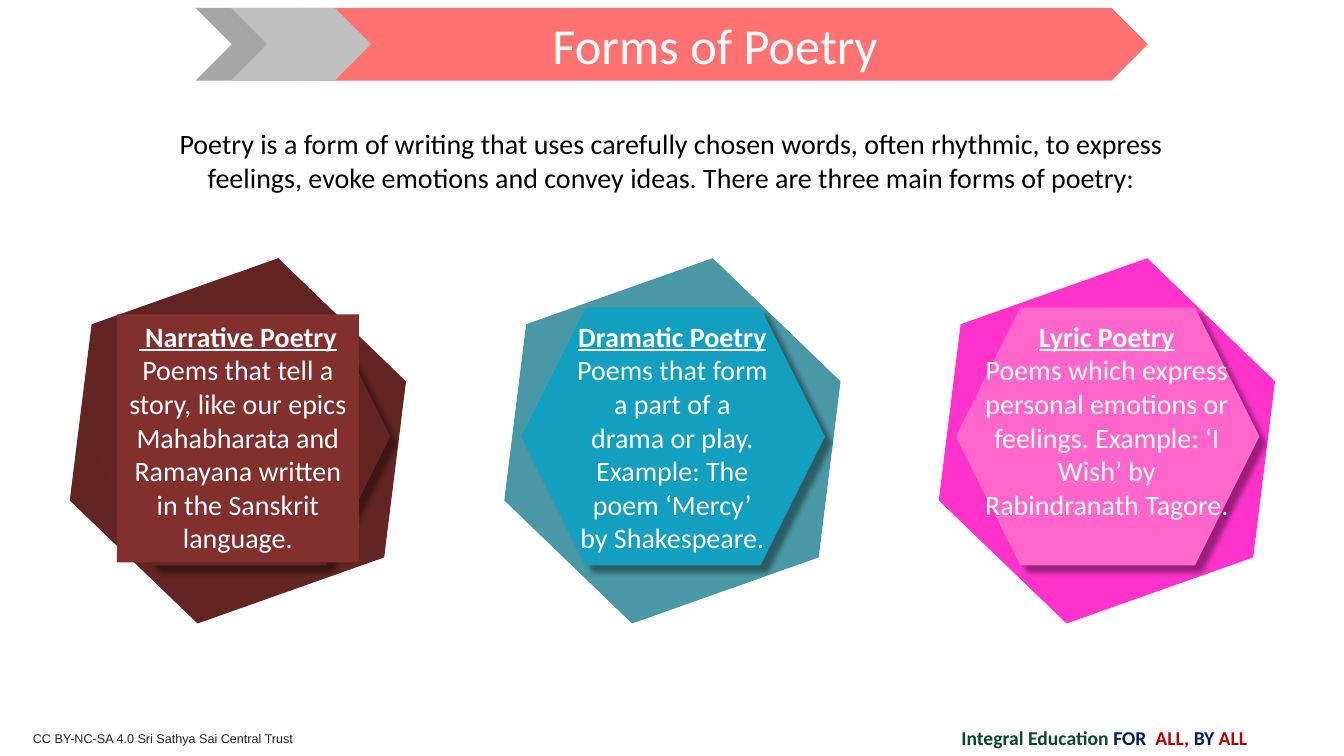
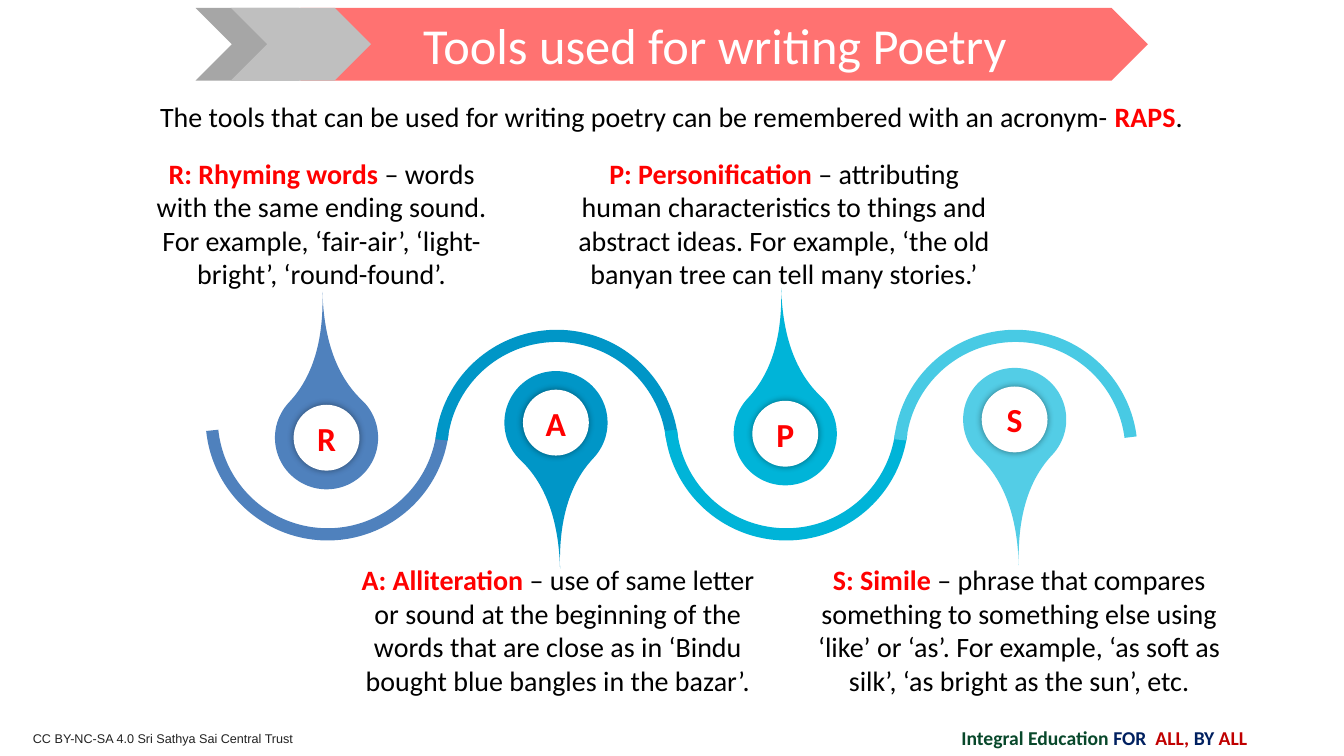
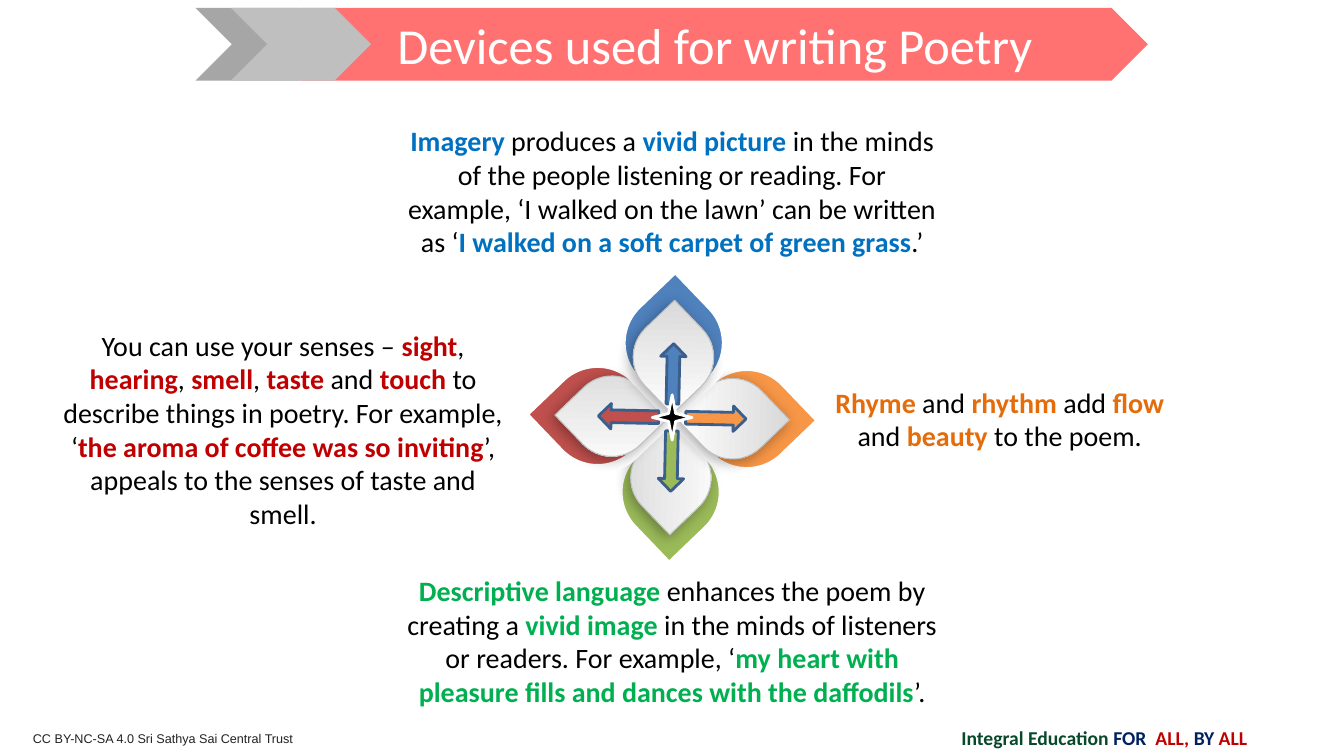
from dataclasses import dataclass
from math import cos, radians, sin

from lxml import etree
from pptx import Presentation
from pptx.dml import color
from pptx.enum import shapes, text
from pptx.oxml import ns
from pptx.util import Cm, Pt


@dataclass(frozen=True)
class Theme:
    font: str = "Calibri"
    legal: str = "Arial"
    title: int = 36
    letter: int = 24
    body: int = 20
    motto: int = 14
    small: int = 9
    ink: str = "000000"
    paper: str = "FFFFFF"
    band: str = "FF7271"
    dark: str = "A6A6A6"
    light: str = "BFBFBF"
    pale: str = "D9D9D9"
    edge: str = "3A5F8C"
    grey: str = "222222"
    green: str = "08482B"
    navy: str = "002060"
    brick: str = "C00000"
    red: str = "FF0000"


T = Theme()
KIND = shapes.MSO_SHAPE
MID = text.MSO_ANCHOR.MIDDLE
CENTRE = text.PP_ALIGN.CENTER
FULL = 216  # a whole turn in block-arc adjustment units


def rgb(code):
    return color.RGBColor.from_string(code)


# Basic parts; every box is (left, top, width, height) in cm
def shape(slide, kind, box, fill, turn=0, adj=(), line=None, wide=0):
    part = slide.shapes.add_shape(kind, *map(Cm, box))
    part.shadow.inherit = False
    part.rotation = turn
    for i, value in enumerate(adj):
        part.adjustments[i] = value
    if fill:
        part.fill.solid()
        part.fill.fore_color.rgb = rgb(fill)
    if line:
        part.line.color.rgb = rgb(line)
        part.line.width = Pt(wide)
    else:
        part.line.fill.background()
    return part


def shade(part, alpha, blur, dist, angle):
    effects = part._element.spPr.find(ns.qn("a:effectLst"))
    outer = etree.SubElement(
        effects, ns.qn("a:outerShdw"), blurRad=str(Pt(blur)),
        dist=str(Pt(dist)), dir=str(angle * 60000), algn="ctr", rotWithShape="0")
    tint = etree.SubElement(outer, ns.qn("a:srgbClr"), val=T.ink)
    etree.SubElement(tint, ns.qn("a:alpha"), val=str(alpha * 1000))


def style(run, size, ink, bold=False, line=False, font=T.font):
    run.font.name = font
    run.font.size = Pt(size)
    run.font.color.rgb = rgb(ink)
    run.font.bold = bold
    run.font.underline = line


def label(part, words, size, ink, bold=False):
    frame = part.text_frame
    frame.text = words
    frame.vertical_anchor = MID
    frame.paragraphs[0].alignment = CENTRE
    style(frame.paragraphs[0].runs[0], size, ink, bold)


def frame_at(slide, box):
    frame = slide.shapes.add_textbox(*map(Cm, box)).text_frame
    frame.word_wrap = True
    return frame


def prose(slide, box, words, accent=T.ink):
    """Centred body text; words between bars are bold in the accent colour."""
    para = frame_at(slide, box).paragraphs[0]
    para.alignment = CENTRE
    for i, piece in enumerate(words.split("|")):
        if piece:
            run = para.add_run()
            run.text = piece
            strong = i % 2 == 1
            style(run, T.body, accent if strong else T.ink, strong)


# Shared regions
def band(slide, box, title):
    x, y, w, h = box
    shape(slide, KIND.CHEVRON, (x, y, 3.53, h), T.dark)
    plate = shape(slide, KIND.PENTAGON, (x + 2.64, y, w - 2.64, h), T.band)
    label(plate, title, T.title, T.paper)
    shape(slide, KIND.CHEVRON, (x + 0.89, y, 3.53, h), T.light)


def foot(slide, box):
    x, y, w, h = box
    frame = frame_at(slide, (x, y + 0.26, 16.94, 0.64))
    frame.text = "CC BY-NC-SA 4.0 Sri Sathya Sai Central Trust"
    style(frame.paragraphs[0].runs[0], T.small, T.grey, font=T.legal)
    frame = frame_at(slide, (x + w - 12.42, y, 12.42, h))
    frame.vertical_anchor = MID
    para = frame.paragraphs[0]
    para.alignment = CENTRE
    for words, ink in (("Integral Education ", T.green), ("FOR  ", T.navy),
                       ("ALL, ", T.brick), ("BY", T.navy), (" ALL", T.brick)):
        run = para.add_run()
        run.text = words
        style(run, T.motto, ink, True)


def page(deck, title):
    slide = deck.slides.add_slide(deck.slide_layouts[6])
    foot(slide, (0.58, 18.03, 33.46, 1.14))
    band(slide, (4.93, 0.2, 24, 1.83), title)
    return slide


# Forms: a tilted hexagon behind a level one, with text on top
def card(slide, box, back, front, width, head, body, panel=None):
    x, y, w, h = box
    adj = (0.25,)
    shape(slide, KIND.HEXAGON, box, back, 340.5, adj)
    inner = shape(slide, KIND.HEXAGON, (x + 0.69, y + 0.64, 7.65, 6.5), front, 0, adj)
    shade(inner, 40, 4, 7, 45)
    area = (x + (w - width) / 2, y + 0.81, width, 6.25)
    if panel:
        frame = shape(slide, KIND.RECTANGLE, area, panel).text_frame
        frame.word_wrap = True
        frame.vertical_anchor = text.MSO_ANCHOR.TOP
    else:
        frame = frame_at(slide, area)
    frame.text = head + "\n" + body
    for i, para in enumerate(frame.paragraphs):
        para.alignment = CENTRE
        style(para.runs[0], T.body, T.paper, i == 0, i == 0)


def forms(deck):
    slide = page(deck, "Forms of Poetry")
    cards = (
        ("632523", "632523", 6.1, " Narrative Poetry",
         "Poems that tell a story, like our epics Mahabharata and Ramayana "
         "written in the Sanskrit language.", "82302E"),
        ("4A98A6", "139FC0", 5.33, "Dramatic Poetry",
         "Poems that form a part of a drama or play. Example: The poem "
         "‘Mercy’ by Shakespeare."),
        ("FF33CC", "FF66CC", 6.65, "Lyric Poetry",
         "Poems which express personal emotions or feelings. Example: "
         "‘I Wish’ by Rabindranath Tagore."),
    )
    for i, item in enumerate(cards):
        card(slide, (1.5 + i * 10.95, 7.11, 8.99, 8), *item)
    prose(slide, (4.09, 3.07, 25.65, 1.96),
          "Poetry is a form of writing that uses carefully chosen words, often "
          "rhythmic, to express feelings, evoke emotions and convey ideas. "
          "There are three main forms of poetry:")


# Tools: a wave of arcs, each holding a lettered pin
def wave(slide, box, ink, low):
    start, end = 102.36, 202.46
    if low:
        start, end = FULL - end, FULL - start
    shape(slide, KIND.BLOCK_ARC, box, ink, 344.7 if low else 15.3, (start, end, 0.05))


def pin(slide, box, ink, up, letter):
    x, y, w, h = box
    shape(slide, KIND.TEAR, box, ink, 313.4 if up else 133.4, (2,))
    disc = shape(slide, KIND.OVAL, (x + 0.47, y + 0.47, w - 0.94, h - 0.94), T.paper)
    shade(disc, 40, 5, 0, 0)
    frame = disc.text_frame
    frame.margin_left = frame.margin_right = 0
    frame.margin_top = frame.margin_bottom = 0
    label(disc, letter, T.letter, T.red, True)


def tools(deck):
    slide = page(deck, "Tools used for writing Poetry")
    prose(slide, (3.66, 2.39, 26.52, 1.12),
          "The tools that can be used for writing poetry can be remembered "
          "with an acronym- |RAPS|.", T.red)
    # letter, arc and pin colours, pin top, text left and width, text
    items = (
        ("R", "4F81BD", "4F81BD", 9.73, 3.66, 8.89,
         "|R: Rhyming words| – words with the same ending sound. For example, "
         "‘fair-air’, ‘light-bright’, ‘round-found’."),
        ("A", "0096C7", "0096C7", 9.35, 8.74, 10.64,
         "|A: Alliteration| – use of same letter or sound at the beginning of "
         "the words that are close as in ‘Bindu bought blue bangles in the bazar’."),
        ("P", "00B4D8", "00B4D8", 9.63, 14.25, 11.02,
         "|P: Personification| – attributing human characteristics to things and "
         "abstract ideas. For example, ‘the old banyan tree can tell many stories.’"),
        ("S", "48CAE4", "53CDE6", 9.27, 19.79, 11.79,
         "|S: Simile| – phrase that compares something to something else using "
         "‘like’ or ‘as’. For example, ‘as soft as silk’, ‘as bright as the sun’, etc."),
    )
    for i, (letter, arc, drop, top, left, width, words) in enumerate(items):
        x, low = 5.18 + i * 5.78, i % 2 == 0
        wave(slide, (x, 7.47 if low else 8.31, 6.15, 6.15), arc, low)
        pin(slide, (x + 1.75, top, 2.6, 2.6), drop, low, letter)
        prose(slide, (left, 3.81 if low else 14.05, width, 3.68), words, T.red)


# Devices: four petals and arrows turned about a hub
def flower(slide, box):
    x, y, w, h = box
    tilt = 1.2

    def spot(angle, dist, wide, high):
        turn = radians(angle + tilt)
        return (x + w / 2 + dist * cos(turn) - wide / 2,
                y + h / 2 + dist * sin(turn) - high / 2, wide, high)

    petals = ((90, "9BBB59", 135), (0, "F79646", 225),
              (180, "C0504D", 135), (270, "4F81BD", 225))
    leaf, corner = KIND.ROUND_2_DIAG_RECTANGLE, (0.5, 0)
    for angle, ink, glow in petals:
        turn = (angle + 45 + tilt) % 360
        shape(slide, leaf, spot(angle, 1.88, 2.67, 2.67), ink, turn, corner, T.paper, 7)
        inner = shape(slide, leaf, spot(angle, 1.52, 2.03, 2.03), None, turn,
                      corner, T.light, 0.75)
        inner.fill.gradient()
        inner.fill.gradient_angle = glow
        for stop, tone, place in zip(inner.fill.gradient_stops, (T.pale, T.paper), (0, 1)):
            stop.color.rgb = rgb(tone)
            stop.position = place
        shade(inner, 33, 10, 3, 135)
    for angle, ink, _ in petals:
        shape(slide, KIND.RIGHT_ARROW, spot(angle, 1.1, 1.52, 0.64), ink,
              angle + tilt, (), T.edge, 2)
    shape(slide, KIND.STAR_4_POINT, spot(0, 0, 1, 1.14), T.ink, 0, (), T.paper, 2)


def devices(deck):
    slide = page(deck, "Devices used for writing Poetry")
    notes = (
        ((9.93, 3, 14.02, 3.68), "0070C0",
         "|Imagery| produces a |vivid picture| in the minds of the people "
         "listening or reading. For example, ‘I walked on the lawn’ can be "
         "written as ‘|I walked on a soft carpet of green grass|.’"),
        ((20.8, 9.58, 8.79, 1.96), "E46C0A",
         "|Rhyme| and |rhythm| add |flow| and |beauty| to the poem."),
        ((1.19, 8.15, 11.89, 5.38), T.brick,
         "You can use your senses – |sight|, |hearing|, |smell|, |taste| and "
         "|touch| to describe things in poetry. For example, ‘|the aroma of "
         "coffee was so inviting|’, appeals to the senses of taste and smell."),
        ((9.93, 14.33, 14.02, 3.68), "00B050",
         "|Descriptive language| enhances the poem by creating a |vivid image| "
         "in the minds of listeners or readers. For example, ‘|my heart with "
         "pleasure fills and dances with the daffodils|’."),
    )
    for box, ink, words in notes:
        prose(slide, box, words, ink)
    flower(slide, (13.19, 6.77, 7.5, 7.5))


def main():
    deck = Presentation()
    deck.slide_width, deck.slide_height = Cm(33.87), Cm(19.05)
    forms(deck)
    tools(deck)
    devices(deck)
    deck.save("out.pptx")


if __name__ == "__main__":
    main()
